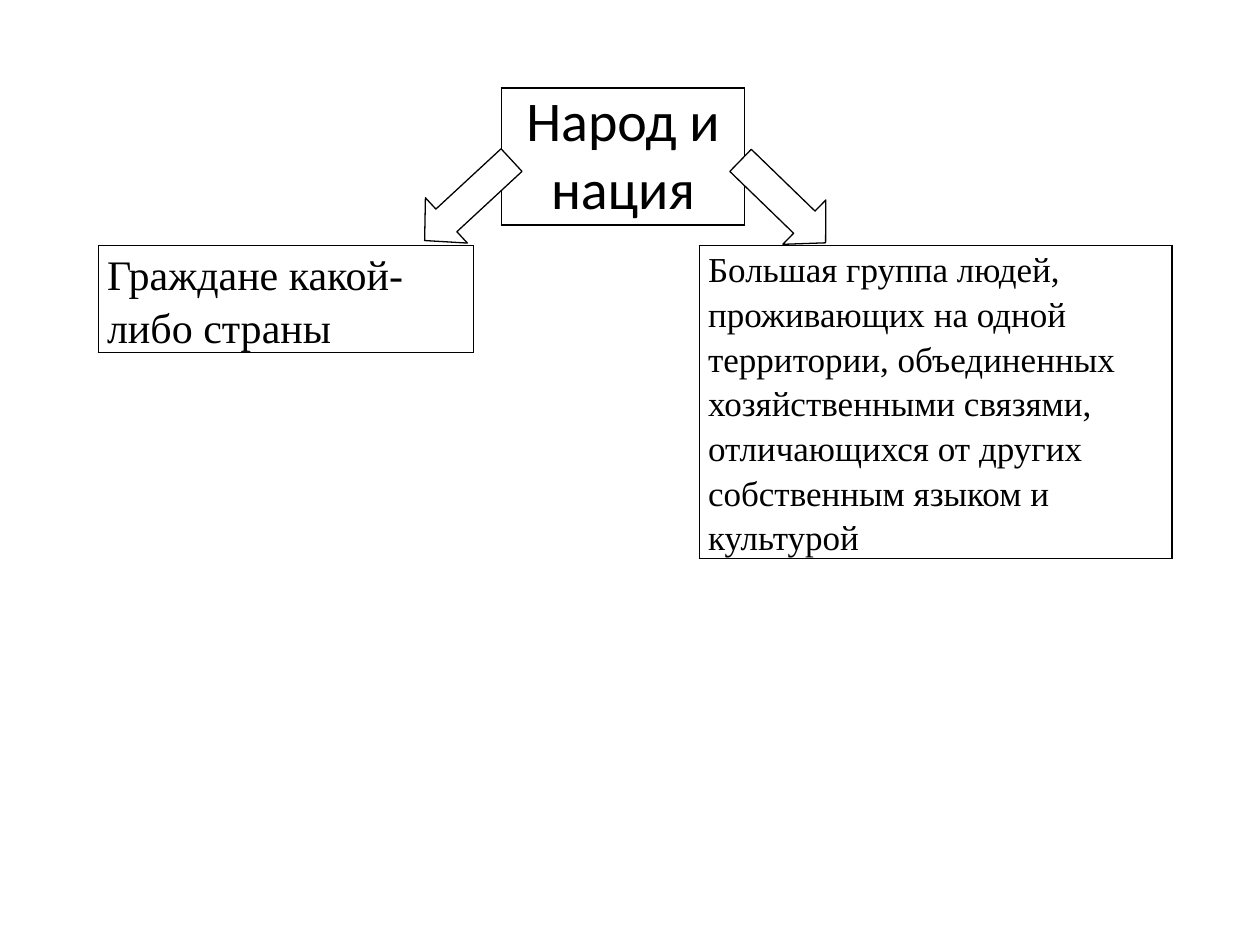
"""Builds a slide that splits a term into its two meanings."""
from lxml import etree
from pptx import Presentation
from pptx.dml.color import RGBColor
from pptx.enum import shapes, text
from pptx.oxml.ns import qn
from pptx.util import Inches, Pt

HUES = {"ink": "000000", "paper": "FFFFFF"}
SERIF = "Times New Roman"
BOXES = [
    ("Народ и нация", (3.98, 0.7, 1.93, 1.07), 0.64,
     dict(size=32, font="Calibri", align=text.PP_ALIGN.CENTER)),
    ("Граждане какой-либо страны", (0.78, 1.95, 2.98, 0.92), 0.61,
     dict(size=24, font=SERIF, space=1.15)),
    ("Большая группа людей, проживающих на одной территории, "
     "объединенных хозяйственными связями, отличающихся от других "
     "собственным языком и культурой", (5.55, 1.95, 3.75, 2.68), 0.88,
     dict(size=20, font=SERIF, space=1.15)),
]
ARROWS = [(3.47, 1.12, 47.2), (5.97, 1.13, 314.1)]


def hue(name):
    return RGBColor.from_string(HUES[name])


def write(frame, words, size, font, align=None, space=None):
    frame.word_wrap = True
    para = frame.paragraphs[0]
    para.alignment = align
    para.line_spacing = space
    run = para.add_run()
    run.text = words
    run.font.size = Pt(size)
    run.font.name = font
    run.font.color.rgb = hue("ink")


def edge(cell):
    props = cell._tc.get_or_add_tcPr()
    for spot, side in enumerate(("lnL", "lnR", "lnT", "lnB")):
        line = etree.Element(qn(f"a:{side}"), w=str(Pt(1)))
        fill = etree.SubElement(line, qn("a:solidFill"))
        etree.SubElement(fill, qn("a:srgbClr"), val=HUES["ink"])
        props.insert(spot, line)


def add_box(slide, words, place, row, style):
    frame = slide.shapes.add_table(1, 1, *map(Inches, place))
    table = frame.table
    table.first_row = table.horz_banding = False
    table.rows[0].height = Inches(row)
    frame.height = Inches(place[3])
    cell = table.cell(0, 0)
    cell.margin_left = cell.margin_right = Inches(0.07)
    cell.margin_top = cell.margin_bottom = 0
    cell.fill.background()
    edge(cell)
    write(cell.text_frame, words, **style)


def add_arrow(slide, left, top, turn):
    arrow = slide.shapes.add_shape(
        shapes.MSO_SHAPE.DOWN_ARROW, *map(Inches, (left, top, 0.49, 0.94)))
    arrow.adjustments[0] = 0.5
    arrow.adjustments[1] = 0.48
    arrow.rotation = turn
    arrow.shadow.inherit = False
    arrow.fill.solid()
    arrow.fill.fore_color.rgb = hue("paper")
    arrow.line.color.rgb = hue("ink")
    arrow.line.width = Pt(0.75)


def main():
    deck = Presentation()
    deck.slide_width, deck.slide_height = Inches(10), Inches(7.5)
    slide = deck.slides.add_slide(deck.slide_layouts[6])
    for box in BOXES:
        add_box(slide, *box)
    for arrow in ARROWS:
        add_arrow(slide, *arrow)
    deck.save("out.pptx")


if __name__ == "__main__":
    main()
